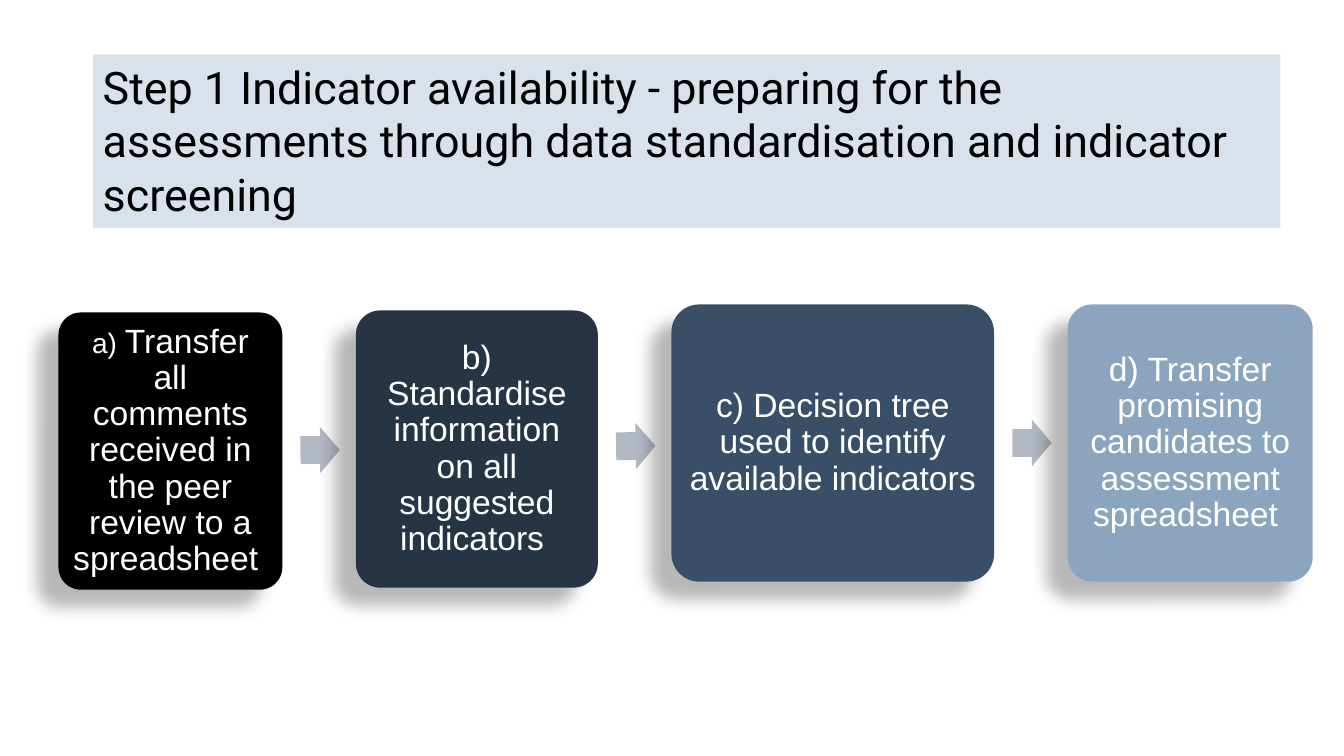
from math import atan2, degrees

from lxml import etree
from pptx import Presentation
from pptx.dml.color import RGBColor
from pptx.enum.shapes import MSO_SHAPE as Shape
from pptx.enum.text import MSO_ANCHOR as Anchor, PP_ALIGN as Align
from pptx.oxml.ns import qn
from pptx.util import Inches, Pt

BLACK = RGBColor(0x00, 0x00, 0x00)
WHITE = RGBColor(0xFF, 0xFF, 0xFF)
TITLE_FILL = RGBColor(0xD9, 0xE1, 0xEA)
ARROW_FILL = RGBColor(0xB2, 0xB9, 0xC4)
NAVY = RGBColor(0x26, 0x34, 0x44)
SLATE = RGBColor(0x39, 0x4F, 0x67)
STEEL = RGBColor(0x8C, 0xA5, 0xBF)

TITLE = ("Step 1 Indicator availability - preparing for the assessments "
         "through data standardisation and indicator screening")

# Top, width, fill, inset and (text, size) runs of each step
STEPS = [
    (3.10, 2.22, BLACK, 0.08,
     [("a) ", 20), ("Transfer all comments received in the peer review to a spreadsheet ", 24)]),
    (3.08, 2.40, NAVY, 0.1, [("b) Standardise information on all suggested indicators ", 24)]),
    (3.02, 3.20, SLATE, 0.1, [("c) Decision tree used to identify available indicators", 24)]),
    (3.02, 2.43, STEEL, 0.1, [("d) Transfer promising candidates to assessment spreadsheet ", 24)]),
]
STEP_HEIGHT = 2.75
STEP_GAP = 0.73
ARROW_OFFSET = 0.18
ARROW_WIDTH, ARROW_HEIGHT = 0.39, 0.46


def add_filled(slide, kind, left, top, width, height, fill):
    shape = slide.shapes.add_shape(
        kind, Inches(left), Inches(top), Inches(width), Inches(height))
    shape.shadow.inherit = False
    shape.fill.solid()
    shape.fill.fore_color.rgb = fill
    shape.line.fill.background()
    return shape


def add_run(paragraph, text, size, font, color):
    run = paragraph.add_run()
    run.text = text
    run.font.size = Pt(size)
    run.font.name = font
    run.font.color.rgb = color


def add_soft_shadow(shape):
    effects = shape._element.spPr.find(qn("a:effectLst"))
    shadow = etree.SubElement(
        effects, qn("a:outerShdw"), blurRad=str(Pt(11.8)), dist=str(Pt(19.7)),
        dir=str(141 * 60000), algn="ctr", rotWithShape="0")
    color = etree.SubElement(shadow, qn("a:srgbClr"), val=str(BLACK))
    etree.SubElement(color, qn("a:alpha"), val="28000")


def add_title(slide, left, top, width, height):
    banner = add_filled(slide, Shape.RECTANGLE, left, top, width, height, TITLE_FILL)
    frame = banner.text_frame
    frame.word_wrap = True
    frame.vertical_anchor = Anchor.TOP
    paragraph = frame.paragraphs[0]
    paragraph.alignment = Align.LEFT
    add_run(paragraph, TITLE, 32, "Roboto", BLACK)


def add_step(slide, left, top, width, fill, inset, runs):
    box = add_filled(slide, Shape.ROUNDED_RECTANGLE, left, top, width, STEP_HEIGHT, fill)
    box.adjustments[0] = 0.1
    add_soft_shadow(box)
    frame = box.text_frame
    frame.word_wrap = True
    frame.vertical_anchor = Anchor.MIDDLE
    frame.margin_left = frame.margin_right = Inches(inset)
    frame.margin_top = frame.margin_bottom = Inches(inset)
    paragraph = frame.paragraphs[0]
    paragraph.alignment = Align.CENTER
    paragraph.line_spacing = 0.9
    for text, size in runs:
        add_run(paragraph, text, size, "Arial", WHITE)


def add_arrow(slide, left, middle, angle):
    arrow = add_filled(slide, Shape.RIGHT_ARROW, left, middle - ARROW_HEIGHT / 2,
                       ARROW_WIDTH, ARROW_HEIGHT, ARROW_FILL)
    arrow.adjustments[0] = 0.6
    arrow.adjustments[1] = 0.5
    arrow.rotation = angle


def add_process(slide, left):
    previous = None
    for top, width, fill, inset, runs in STEPS:
        center = (left + width / 2, top + STEP_HEIGHT / 2)
        # Each arrow points from one step's center to the next
        if previous:
            rise, reach = center[1] - previous[1], center[0] - previous[0]
            add_arrow(slide, left - STEP_GAP + ARROW_OFFSET,
                      (center[1] + previous[1]) / 2, degrees(atan2(rise, reach)))
        add_step(slide, left, top, width, fill, inset, runs)
        previous = center
        left += width + STEP_GAP


def main():
    presentation = Presentation()
    presentation.slide_width = Inches(13.33)
    presentation.slide_height = Inches(7.5)
    slide = presentation.slides.add_slide(presentation.slide_layouts[6])
    add_process(slide, 0.58)
    add_title(slide, 0.92, 0.54, 11.78, 1.72)
    presentation.save("out.pptx")


if __name__ == "__main__":
    main()
